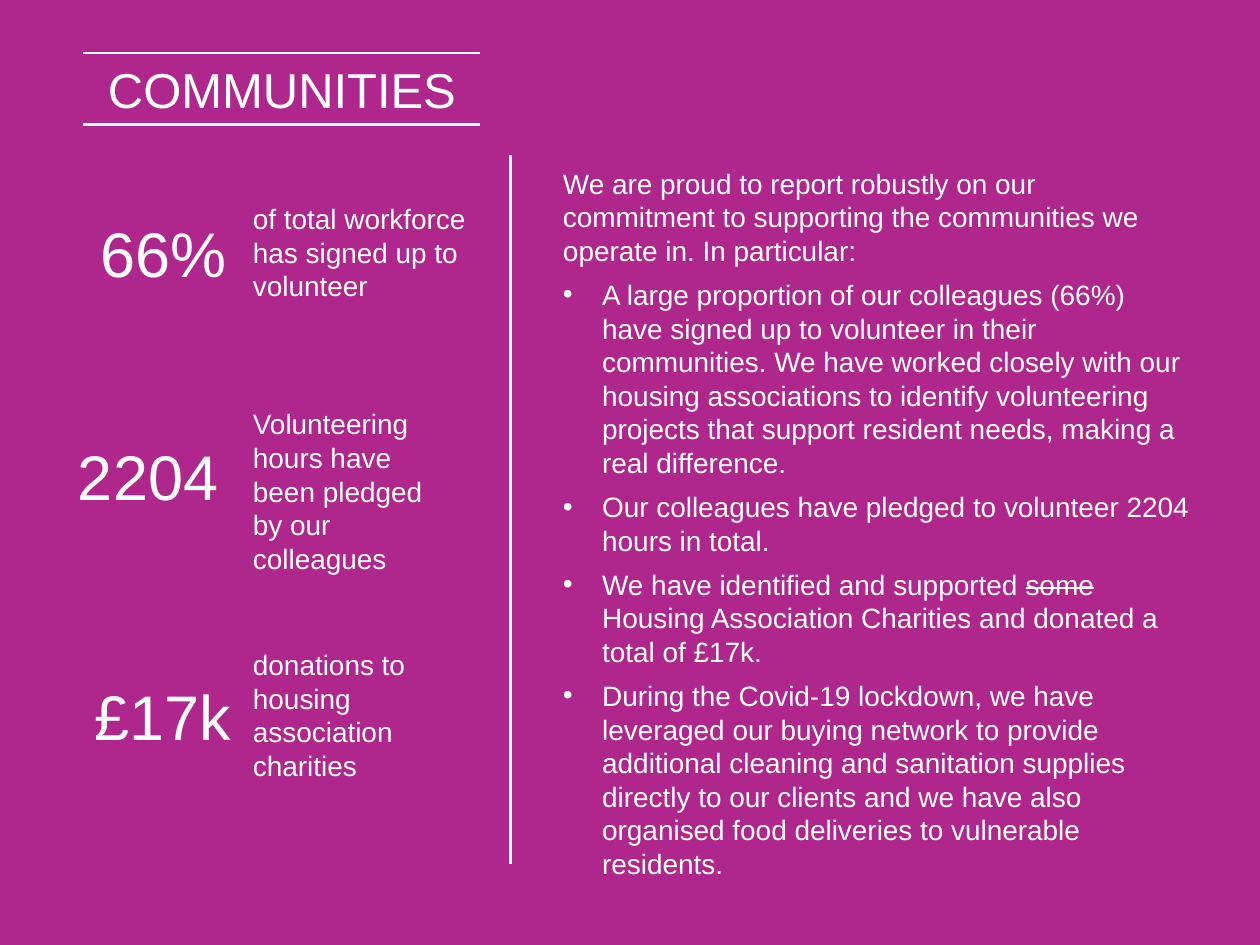
"""Build the Communities slide: three headline figures beside a bulleted summary."""
from dataclasses import dataclass

from lxml import etree
from pptx import Presentation
from pptx import util as u
from pptx.dml.color import RGBColor
from pptx.enum import shapes, text
from pptx.oxml.ns import qn
from pptx.shapes.autoshape import Shape
from pptx.slide import Slide

PURPLE = RGBColor(0xAF, 0x26, 0x8D)
WHITE = RGBColor(0xFF, 0xFF, 0xFF)
FONT = "Arial"
BODY_SIZE, TITLE_SIZE, FIGURE_SIZE = 16, 28, 36
CAPTION_LEFT = 4.85
INDENT = u.Cm(0.79)


@dataclass(frozen=True)
class Area:
    """A rectangle in centimetres."""
    left: float
    top: float
    width: float
    height: float


@dataclass(frozen=True)
class Statistic:
    """A headline figure and the caption to its right."""
    figure: str
    figure_area: Area
    caption: str
    caption_area: Area


@dataclass(frozen=True)
class Rule:
    """A straight line between two points in centimetres."""
    x1: float
    y1: float
    x2: float
    y2: float


@dataclass(frozen=True)
class Span:
    """A piece of text, struck through or not."""
    words: str
    struck: bool = False


STATISTICS = (
    Statistic("66%", Area(1.7, 4.19, 3.18, 1.8),
              "of total workforce has signed up to volunteer",
              Area(CAPTION_LEFT, 3.94, 4.83, 2.31)),
    Statistic("2204", Area(0.89, 8.69, 4.19, 1.8),
              "Volunteering hours have been pledged by our colleagues",
              Area(CAPTION_LEFT, 8.08, 4.57, 3.68)),
    Statistic("£17k", Area(1.5, 13.54, 3.56, 1.8),
              "donations to housing association charities",
              Area(CAPTION_LEFT, 12.93, 4.83, 3)),
)

RULES = (
    Rule(1.68, 1.07, 9.68, 1.07),
    Rule(1.68, 2.51, 9.68, 2.51),
    Rule(10.29, 3.12, 10.29, 17.42),
)

INTRODUCTION = ("We are proud to report robustly on our commitment to supporting "
                "the communities we operate in. In particular:")

BULLETS = (
    (Span("A large proportion of our colleagues (66%) have signed up to volunteer "
          "in their communities. We have worked closely with our housing "
          "associations to identify volunteering projects that support resident "
          "needs, making a real difference."),),
    (Span("Our colleagues have pledged to volunteer 2204 hours in total."),),
    (Span("We have identified and supported "), Span("some", struck=True),
     Span(" Housing Association Charities and donated a total of £17k.")),
    (Span("During the Covid-19 lockdown, we have leveraged our buying network to "
          "provide additional cleaning and sanitation supplies directly to our "
          "clients and we have also organised food deliveries to vulnerable "
          "residents."),),
)


def format_font(font: text.MSO_ANCHOR, size: int) -> None:
    """Apply the shared typeface and colour at the given size."""
    font.name = FONT
    font.size = u.Pt(size)
    font.color.rgb = WHITE


def add_text(page: Slide, area: Area, words: str, size: int,
             centred: bool = False) -> Shape:
    """Add a wrapping text box holding one formatted paragraph."""
    box = page.shapes.add_textbox(u.Cm(area.left), u.Cm(area.top),
                                  u.Cm(area.width), u.Cm(area.height))
    frame = box.text_frame
    frame.text = words
    frame.word_wrap = True
    frame.auto_size = text.MSO_AUTO_SIZE.SHAPE_TO_FIT_TEXT
    para = frame.paragraphs[0]
    if centred:
        para.alignment = text.PP_ALIGN.CENTER
    format_font(para.runs[0].font, size)
    return box


def add_rule(page: Slide, rule: Rule) -> None:
    """Draw a thin white line."""
    line = page.shapes.add_connector(shapes.MSO_CONNECTOR.STRAIGHT, u.Cm(rule.x1),
                                     u.Cm(rule.y1), u.Cm(rule.x2), u.Cm(rule.y2))
    line.line.color.rgb = WHITE
    line.line.width = u.Pt(1.5)
    etree.SubElement(line._element.spPr, qn("a:effectLst"))


def add_bullet(box: Shape, spans: tuple[Span, ...]) -> None:
    """Append a bulleted paragraph with a hanging indent."""
    para = box.text_frame.add_paragraph()
    para.space_after = u.Pt(6)
    properties = para._p.get_or_add_pPr()
    properties.set("marL", str(INDENT))
    properties.set("indent", str(-INDENT))
    etree.SubElement(properties, qn("a:buFont")).set("typeface", FONT)
    etree.SubElement(properties, qn("a:buChar")).set("char", "•")
    for span in spans:
        run = para.add_run()
        run.text = span.words
        format_font(run.font, BODY_SIZE)
        if span.struck:
            run._r.get_or_add_rPr().set("strike", "sngStrike")


def add_statistic(page: Slide, statistic: Statistic) -> None:
    """Add a figure with its caption."""
    add_text(page, statistic.figure_area, statistic.figure, FIGURE_SIZE, centred=True)
    add_text(page, statistic.caption_area, statistic.caption, BODY_SIZE)


def main() -> None:
    """Build and save the deck."""
    deck = Presentation()
    deck.slide_width, deck.slide_height = u.Cm(25.4), u.Cm(19.05)
    page = deck.slides.add_slide(deck.slide_layouts[6])
    page.background.fill.solid()
    page.background.fill.fore_color.rgb = PURPLE

    summary = add_text(page, Area(11.1, 3.23, 13.21, 14.78), INTRODUCTION, BODY_SIZE)
    summary.text_frame.paragraphs[0].space_after = u.Pt(6)
    for spans in BULLETS:
        add_bullet(summary, spans)

    add_text(page, Area(1.85, 1.07, 7.67, 1.45), "COMMUNITIES", TITLE_SIZE, centred=True)
    for statistic in STATISTICS:
        add_statistic(page, statistic)
    for rule in RULES:
        add_rule(page, rule)

    deck.save("out.pptx")


if __name__ == "__main__":
    main()
